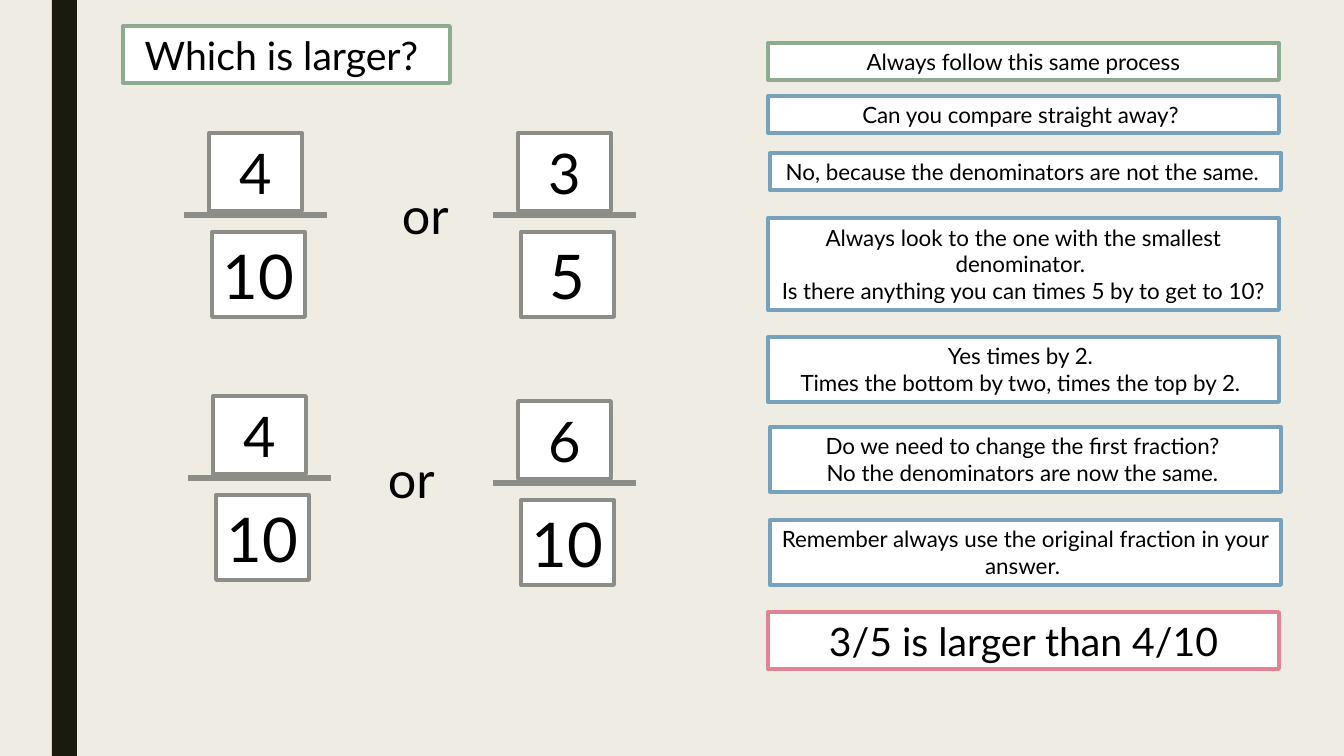
from dataclasses import dataclass

from lxml.etree import SubElement
from pptx import Presentation
from pptx.dml.color import RGBColor
from pptx.enum.shapes import MSO_CONNECTOR, MSO_SHAPE
from pptx.enum.text import MSO_ANCHOR, MSO_AUTO_SIZE, PP_ALIGN
from pptx.oxml.ns import qn
from pptx.util import Pt

# Content: wording with places in px
SLIDE_SIZE = (1344, 756)
STRIPE = (52, 0, 25, 756)
TITLE = ("Which is larger? ", (123, 26, 327, 57))

# numerator, denominator, left end of the bar, height of the bar
FRACTIONS = [
    ("4", "10", 184, 215),
    ("3", "5", 493, 215),
    ("4", "10", 188, 478),
    ("6", "10", 493, 483),
]
OR_LABELS = [(392, 179), (378, 443)]

# text, left, top, height, border, type size
STEPS = [
    ("Always follow this same process", 768, 43, 37, "green", "step"),
    ("Can you compare straight away? ", 768, 96, 37, "blue", "step"),
    ("No, because the denominators are not the same. ", 770, 153, 37, "blue", "step"),
    ("Always look to the one with the smallest denominator. \n"
     "Is there anything you can times 5 by to get to 10?", 768, 218, 92, "blue", "step"),
    ("Yes times by 2. \nTimes the bottom by two, times the top by 2. ",
     768, 337, 65, "blue", "step"),
    ("Do we need to change the first fraction? \nNo the denominators are now the same. ",
     770, 427, 65, "blue", "step"),
    ("Remember always use the original fraction in your answer. ",
     770, 520, 65, "blue", "step"),
    ("3/5 is larger than 4/10", 768, 612, 57, "pink", "heading"),
]
STEP_WIDTH = 511

# Fraction layout, measured from the left end of its bar
BAR_LENGTH = 143
NUMERATOR_BOX = (25, -82, 93, 78)
DENOMINATOR_BOX = (28, 17, 93, 85)


@dataclass(frozen=True)
class Theme:
    font: str = "Lato"
    paper: str = "EFEDE3"
    stripe: str = "191B0E"
    box: str = "FFFFFF"
    ink: str = "000000"
    green: str = "8DAB8E"
    blue: str = "77A2BB"
    pink: str = "E28394"
    grey: str = "8C8D86"
    step: int = 16
    heading: int = 28
    joiner: int = 36
    numerator: int = 40
    denominator: int = 44
    border: float = 2.75
    bar: float = 4.5


THEME = Theme()


def px(length):
    return round(length * 914400 / 100.8)


def color(name):
    return RGBColor.from_string(getattr(THEME, name))


def write(frame, text, *, size, align=PP_ALIGN.CENTER, anchor=MSO_ANCHOR.MIDDLE):
    frame.word_wrap = True
    frame.auto_size = MSO_AUTO_SIZE.SHAPE_TO_FIT_TEXT
    frame.vertical_anchor = anchor
    frame.text = text
    for paragraph in frame.paragraphs:
        paragraph.alignment = align
        for run in paragraph.runs:
            run.font.name = THEME.font
            run.font.size = Pt(getattr(THEME, size))
            run.font.color.rgb = color("ink")


def add_rectangle(shapes, place, fill):
    rectangle = shapes.add_shape(MSO_SHAPE.RECTANGLE, *map(px, place))
    rectangle.shadow.inherit = False
    rectangle.fill.solid()
    rectangle.fill.fore_color.rgb = color(fill)
    rectangle.line.fill.background()
    return rectangle


def add_box(shapes, text, place, border, size):
    box = add_rectangle(shapes, place, "box")
    box.line.color.rgb = color(border)
    box.line.width = Pt(THEME.border)
    write(box.text_frame, text, size=size)


def add_fraction(slide, numerator, denominator, left, middle):
    parts = slide.shapes.add_group_shape().shapes
    for role, text, (dx, dy, width, height) in (
        ("numerator", numerator, NUMERATOR_BOX),
        ("denominator", denominator, DENOMINATOR_BOX),
    ):
        add_box(parts, text, (left + dx, middle + dy, width, height), "grey", role)
    bar = parts.add_connector(
        MSO_CONNECTOR.STRAIGHT, px(left), px(middle), px(left + BAR_LENGTH), px(middle))
    bar.line.color.rgb = color("grey")
    bar.line.width = Pt(THEME.bar)
    SubElement(bar._element.spPr, qn("a:effectLst"))


def main():
    deck = Presentation()
    deck.slide_width, deck.slide_height = map(px, SLIDE_SIZE)
    slide = deck.slides.add_slide(deck.slide_layouts[6])

    # Backdrop and title
    slide.background.fill.solid()
    slide.background.fill.fore_color.rgb = color("paper")
    add_rectangle(slide.shapes, STRIPE, "stripe")
    title, title_place = TITLE
    add_box(slide.shapes, title, title_place, "green", "heading")

    # Fractions to compare
    for fraction in FRACTIONS:
        add_fraction(slide, *fraction)
    for left, top in OR_LABELS:
        joiner = slide.shapes.add_textbox(px(left), px(top), px(87), px(72))
        write(joiner.text_frame, "or", size="joiner",
              align=PP_ALIGN.LEFT, anchor=MSO_ANCHOR.TOP)

    # Steps of the process
    for text, left, top, height, border, size in STEPS:
        add_box(slide.shapes, text, (left, top, STEP_WIDTH, height), border, size)

    deck.save("out.pptx")


if __name__ == "__main__":
    main()
